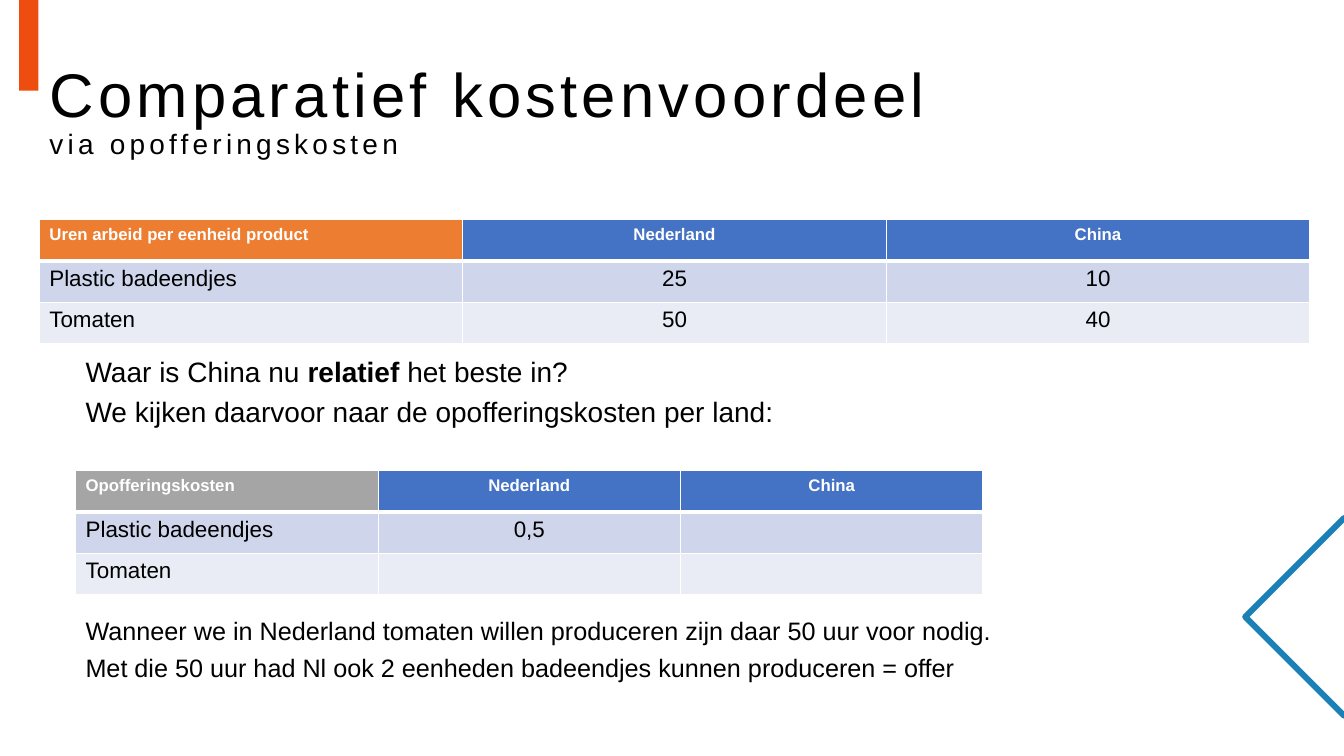
from pptx import Presentation
from pptx.dml.color import RGBColor
from pptx.enum.shapes import MSO_SHAPE
from pptx.enum.text import MSO_ANCHOR, MSO_AUTO_SIZE, PP_ALIGN
from pptx.oxml.ns import qn
from pptx.util import Pt
from lxml import etree

PX = 9144  # 100 px to the inch
LEFT, CENTER = PP_ALIGN.LEFT, PP_ALIGN.CENTER
MIDDLE, NO_FIT = MSO_ANCHOR.MIDDLE, MSO_AUTO_SIZE.NONE
RECTANGLE = MSO_SHAPE.RECTANGLE

THEME = {
    "font": "Arial", "text": "000000", "white": "FFFFFF",
    "bar": "ED4D0F", "diamond": "1A80B6",
    "header": "4472C4", "hours": "ED7D31", "costs": "A5A5A5",
    "bands": ["CFD5EA", "E9EBF5"],
    "title": 44, "subtitle": 20, "question": 20, "answer": 18,
    "table_head": 12, "table_body": 16,
}


def style(r, size, color=THEME["text"], bold=False):
    r.font.name = THEME["font"]
    r.font.size = Pt(size)
    r.font.bold = bold
    r.font.color.rgb = RGBColor.from_string(color)


def border(cell, side, width):
    ln = etree.SubElement(cell._tc.get_or_add_tcPr(), qn(f"a:ln{side}"), w=str(Pt(width)))
    fill = etree.SubElement(ln, qn("a:solidFill"))
    etree.SubElement(fill, qn("a:srgbClr"), val=THEME["white"])


prs = Presentation()
prs.slide_width, prs.slide_height = 1333 * PX, 750 * PX
s = prs.slides.add_slide(prs.slide_layouts[5])

# Diamond at the right edge
builder = s.shapes.build_freeform(1343, 524, scale=PX)
builder.add_line_segments([(1343, 700), (1333, 710), (1235, 612), (1333, 514)], close=True)
sp = builder.convert_to_shape()
sp.shadow.inherit = False
sp.fill.background()
sp.line.color.rgb = RGBColor.from_string(THEME["diamond"])
sp.line.width = Pt(4.25)

# Bar above the title
sp = s.shapes.add_shape(RECTANGLE, 19 * PX, -25 * PX, 19 * PX, 115 * PX)
sp.shadow.inherit = False
sp.fill.solid()
sp.fill.fore_color.rgb = RGBColor.from_string(THEME["bar"])
sp.line.fill.background()

# Title and subtitle
sp = s.shapes.title
sp.left, sp.top, sp.width, sp.height = 39 * PX, 39 * PX, 1261 * PX, 145 * PX
tf = sp.text_frame
tf.text = "Comparatief kostenvoordeel\vvia opofferingskosten"
tf.vertical_anchor, tf.auto_size = MIDDLE, NO_FIT
p = tf.paragraphs[0]
p.alignment, p.line_spacing = LEFT, 0.9
for r, size in zip(p.runs, (THEME["title"], THEME["subtitle"])):
    style(r, size)
    r._r.get_or_add_rPr().set("spc", "300")

# Tables: left, top, column width, corner colour, rows
tables = [
    (39, 218, 420, THEME["hours"], [
        ("Uren arbeid per eenheid product", "Nederland", "China"),
        ("Plastic badeendjes", "25", "10"),
        ("Tomaten", "50", "40")]),
    (75, 467, 300, THEME["costs"], [
        ("Opofferingskosten", "Nederland", "China"),
        ("Plastic badeendjes", "0,5", ""),
        ("Tomaten", "", "")]),
]
ROW = 41
for left, top, col_width, corner, rows in tables:
    table = s.shapes.add_table(3, 3, left * PX, top * PX, 3 * col_width * PX, 3 * ROW * PX).table
    for i, row in enumerate(rows):
        table.rows[i].height = ROW * PX
        for j, text in enumerate(row):
            cell = table.cell(i, j)
            for side in "LRTB":
                below_header = (i, side) in ((0, "B"), (1, "T"))
                border(cell, side, 3 if below_header else 1)
            if i:
                fill = THEME["bands"][i - 1]
            else:
                fill = THEME["header"] if j else corner
            cell.fill.solid()
            cell.fill.fore_color.rgb = RGBColor.from_string(fill)
            cell.text = text
            p = cell.text_frame.paragraphs[0]
            p.alignment = CENTER if j else LEFT
            for r in p.runs:
                if i:
                    style(r, THEME["table_body"])
                else:
                    style(r, THEME["table_head"], THEME["white"], True)

# Text blocks: box, size, paragraphs of (text, bold) runs
blocks = [
    ((75, 606, 1088, 142), THEME["answer"], [
        [("Wanneer we in Nederland tomaten willen produceren zijn daar 50 uur voor nodig.", False)],
        [("Met die 50 uur had Nl ook 2 eenheden badeendjes kunnen produceren = offer", False)]]),
    ((75, 347, 900, 110), THEME["question"], [
        [("Waar is China nu ", False), ("relatief", True), (" het beste in?", False)],
        [("We kijken daarvoor naar de opofferingskosten per land:", False)]]),
]
for box, size, paragraphs in blocks:
    tf = s.shapes.add_textbox(*(v * PX for v in box)).text_frame
    tf.word_wrap = True
    for i, runs in enumerate(paragraphs):
        p = tf.add_paragraph() if i else tf.paragraphs[0]
        p.space_before = Pt(size * 0.23)
        for text, bold in runs:
            r = p.add_run()
            r.text = text
            style(r, size, bold=bold)

prs.save("out.pptx")
